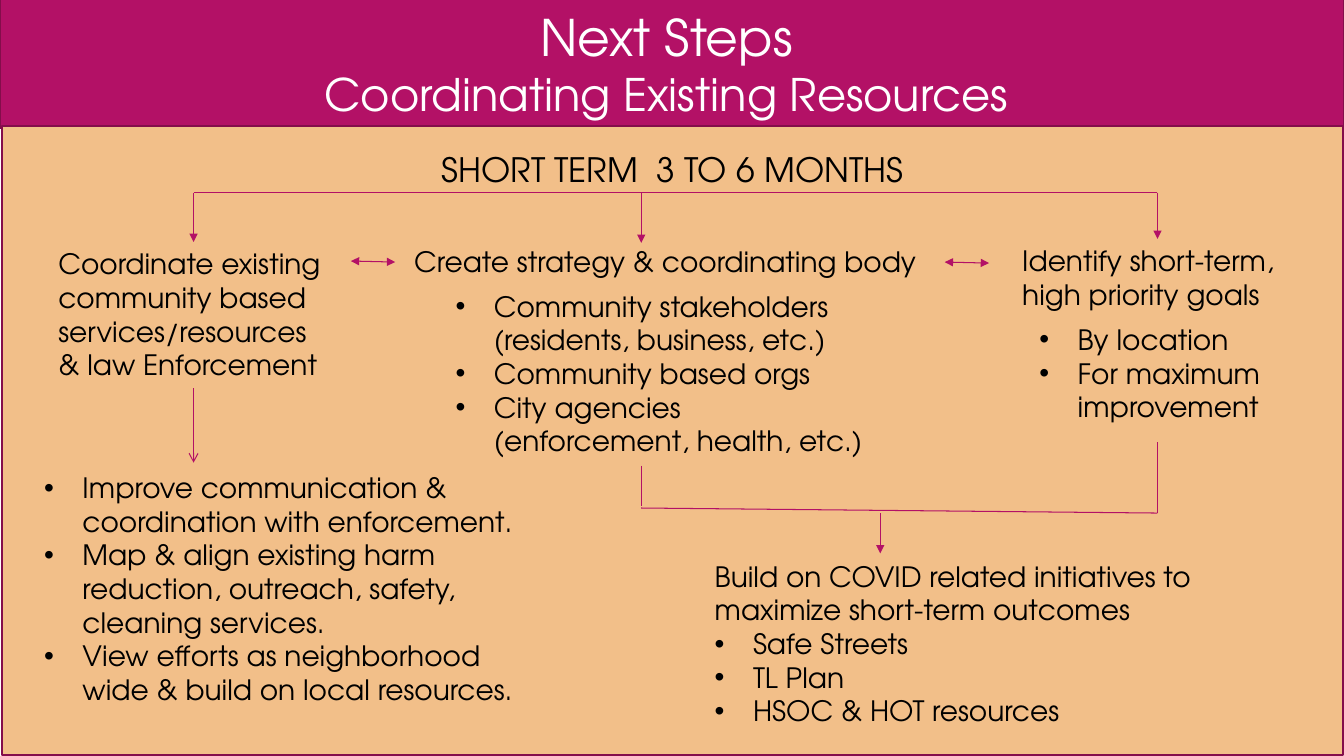
import pptx
import pptx.dml.color
import pptx.enum.shapes
import pptx.enum.text
import pptx.oxml
import pptx.oxml.ns
import pptx.util
from pptx.util import Inches

MAGENTA = pptx.dml.color.RGBColor(0xB3, 0x11, 0x66)
PLUM = pptx.dml.color.RGBColor(0x84, 0x0D, 0x4B)
PEACH = pptx.dml.color.RGBColor(0xF2, 0xBF, 0x89)
WHITE = pptx.dml.color.RGBColor(0xFF, 0xFF, 0xFF)
BLACK = pptx.dml.color.RGBColor(0, 0, 0)
CENTER = pptx.enum.text.PP_ALIGN.CENTER
LEFT = pptx.enum.text.PP_ALIGN.LEFT
TOP, BOTTOM = 0, 2


def add_xml(parent, tag, **attributes):
    child = pptx.oxml.parse_xml(f'<a:{tag} {pptx.oxml.ns.nsdecls("a")}/>')
    for key, value in attributes.items():
        child.set(key, str(value))
    parent.append(child)


class FlowSlide:
    font = "TeX Gyre Adventor"
    bullet_indent = Inches(0.38)

    def __init__(self, slide):
        self.shapes = slide.shapes

    def panel(self, left, top, width, height, color):
        panel = self.shapes.add_shape(
            pptx.enum.shapes.MSO_SHAPE.RECTANGLE,
            Inches(left), Inches(top), Inches(width), Inches(height))
        panel.shadow.inherit = False
        panel.fill.solid()
        panel.fill.fore_color.rgb = color
        panel.line.color.rgb = PLUM
        panel.line.width = pptx.util.Pt(1.5)

    def text(self, left, top, width, height, lines, sizes=(20,), color=BLACK, align=LEFT):
        """Add a text box; a line that starts with a bullet sign becomes a bulleted paragraph."""
        box = self.shapes.add_textbox(Inches(left), Inches(top), Inches(width), Inches(height))
        frame = box.text_frame
        frame.word_wrap = True
        frame.auto_size = pptx.enum.text.MSO_AUTO_SIZE.SHAPE_TO_FIT_TEXT
        for index, line in enumerate(lines):
            paragraph = frame.add_paragraph() if index else frame.paragraphs[0]
            paragraph.alignment = align
            if line.startswith("•"):
                properties = paragraph._p.get_or_add_pPr()
                properties.set("marL", str(self.bullet_indent))
                properties.set("indent", str(-self.bullet_indent))
                add_xml(properties, "buFont", typeface="Arial")
                add_xml(properties, "buChar", char="•")
            run = paragraph.add_run()
            run.text = line.lstrip("• ")
            style = {"name": self.font, "size": pptx.util.Pt(sizes[index % len(sizes)])}
            for key, value in style.items():
                setattr(run.font, key, value)
            run.font.color.rgb = color
        return box

    def line(self, x1, y1, x2, y2, head=None, tail=None, start=None, end=None):
        """Draw a line; start and end are optional (box, side) pairs to join."""
        line = self.shapes.add_connector(
            pptx.enum.shapes.MSO_CONNECTOR.STRAIGHT,
            Inches(x1), Inches(y1), Inches(x2), Inches(y2))
        line.line.color.rgb = MAGENTA
        line.line.width = pptx.util.Pt(0.75)
        for tag, arrow in {"headEnd": head, "tailEnd": tail}.items():
            if arrow:
                add_xml(line.line._get_or_add_ln(), tag, type=arrow)
        add_xml(line._element.spPr, "effectLst")
        if start:
            line.begin_connect(*start)
        if end:
            line.end_connect(*end)


def main():
    deck = pptx.Presentation()
    deck.slide_width, deck.slide_height = Inches(13.33), Inches(7.5)
    flow = FlowSlide(deck.slides.add_slide(deck.slide_layouts[6]))

    flow.panel(0, -0.06, 13.33, 1.33, MAGENTA)
    flow.text(0, 0.01, 13.22, 1.25, ["Next Steps", "Coordinating Existing Resources"],
              sizes=(36, 32), color=WHITE, align=CENTER)
    flow.panel(0.02, 1.25, 13.3, 6.24, PEACH)
    flow.text(0.3, 1.43, 12.74, 0.5, ["SHORT TERM  3 TO 6 MONTHS"], sizes=(24,), align=CENTER)

    services = flow.text(0.48, 2.4, 2.88, 1.45, [
        "Coordinate existing community based services/resources & law Enforcement"])
    flow.text(4.01, 2.38, 5.24, 0.44, ["Create strategy & coordinating body"])
    goals = flow.text(10.04, 2.37, 2.88, 0.77, ["Identify short-term, high priority goals"])
    flow.text(4.42, 2.82, 4.27, 1.78, [
        "• Community stakeholders (residents, business, etc.)",
        "• Community based orgs",
        "• City agencies (enforcement, health, etc.)"])
    flow.text(10.21, 3.15, 3.11, 1.11, ["• By location", "• For maximum improvement"])
    flow.text(0.34, 4.62, 4.97, 2.46, [
        "• Improve communication & coordination with enforcement.",
        "• Map & align existing harm reduction, outreach, safety, cleaning services.",
        "• View efforts as neighborhood wide & build on local resources."])
    flow.text(6.99, 5.5, 6.05, 1.78, [
        "Build on COVID related initiatives to maximize short-term outcomes",
        "• Safe Streets", "• TL Plan", "• HSOC & HOT resources"])

    services_x, strategy_x, goals_x, outcome_x = 1.92, 6.36, 11.48, 8.73
    branch_y = 1.91
    flow.line(goals_x, branch_y, services_x, branch_y)
    for x, target in ((services_x, (services, TOP)), (strategy_x, None), (goals_x, (goals, TOP))):
        flow.line(x, branch_y, x, 2.41, tail="triangle", end=target)
    for x, y in ((3.48, 2.59), (9.37, 2.6)):
        flow.line(x, y, x + 0.44, y + 0.01, head="triangle", tail="triangle")
    flow.line(services_x, 3.85, services_x, 4.59, tail="arrow", start=(services, BOTTOM))

    flow.line(goals_x, 5.09, strategy_x, 5.04)
    flow.line(goals_x, 4.39, goals_x, 5.09)
    flow.line(strategy_x, 4.62, strategy_x, 5.02)
    flow.line(outcome_x, 5.09, outcome_x, 5.49, tail="triangle")

    deck.save("out.pptx")


if __name__ == "__main__":
    main()
